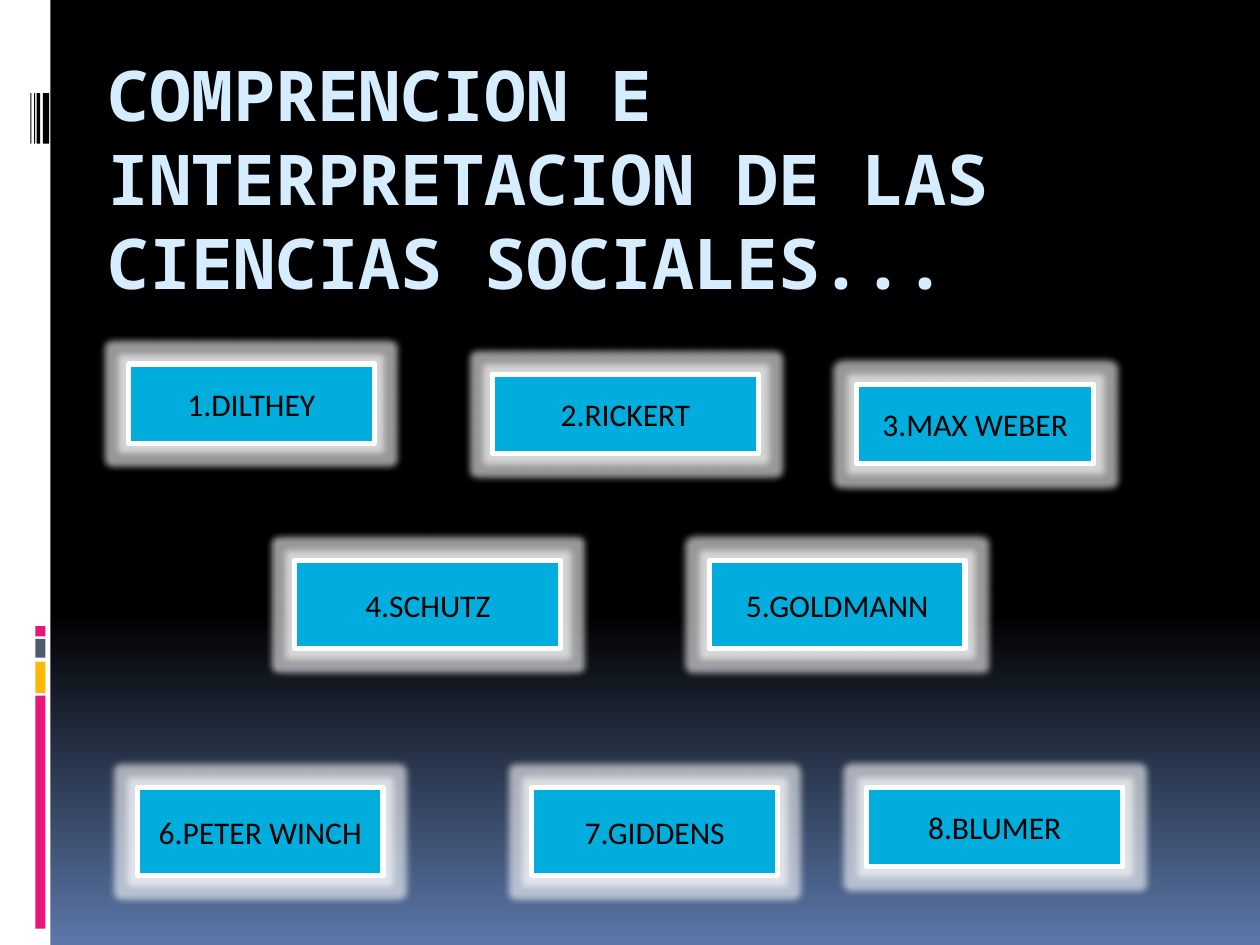
from pptx import Presentation
from pptx.dml.color import RGBColor
from pptx.enum import shapes, text
from pptx.oxml import parse_xml
from pptx.oxml.ns import nsdecls
from pptx.util import Inches, Pt

STRIPES = [
    (0, 0, 0.4, 7.5, "FFFFFF"),
    (0.34, 0.74, 0.05, 0.4, "000000"),
    (0.29, 0.74, 0.03, 0.4, "000000"),
    (0.27, 0.74, 0.01, 0.4, "000000"),
    (0.24, 0.74, 0.01, 0.4, "000000"),
    (0.28, 5.52, 0.08, 1.85, "EA157A"),
    (0.28, 5.25, 0.08, 0.25, "FEB80A"),
    (0.28, 5.07, 0.08, 0.15, "4E5B6F"),
    (0.28, 4.97, 0.08, 0.08, "EA157A"),
]
AUTHORS = [
    ("1.DILTHEY", 1.02, 2.89, 1.95, 0.63),
    ("2.RICKERT", 3.91, 2.97, 2.11, 0.63),
    ("3.MAX WEBER", 6.8, 3.05, 1.88, 0.63),
    ("4.SCHUTZ", 2.34, 4.45, 2.11, 0.7),
    ("5.GOLDMANN", 5.63, 4.45, 2.03, 0.7),
    ("6.PETER WINCH", 1.09, 6.25, 1.95, 0.7),
    ("7.GIDDENS", 4.22, 6.25, 1.95, 0.7),
    ("8.BLUMER", 6.88, 6.25, 2.03, 0.63),
]


def rgb(value):
    return RGBColor.from_string(value)


def set_background(s):
    fill = s.background.fill
    fill.gradient()
    fill.gradient_angle = 270
    for stop, position, color in zip(fill.gradient_stops, (0.65, 1), ("000000", "5B77A8")):
        stop.position = position
        stop.color.rgb = rgb(color)


def add_run(p, words, size, font, color, bold=False):
    r = p.add_run()
    r.text = words
    r.font.size = Pt(size)
    r.font.name = font
    r.font.bold = bold
    r.font.color.rgb = rgb(color)


def add_rect(s, left, top, width, height, color):
    sp = s.shapes.add_shape(shapes.MSO_SHAPE.RECTANGLE, Inches(left), Inches(top),
                            Inches(width), Inches(height))
    sp.shadow.inherit = False
    sp.fill.solid()
    sp.fill.fore_color.rgb = rgb(color)
    sp.line.fill.background()
    return sp


def add_glow(sp, color, radius, alpha):
    effects = sp._element.spPr.find("{*}effectLst")
    effects.append(parse_xml(
        f'<a:glow {nsdecls("a")} rad="{Pt(radius)}"><a:srgbClr val="{color}">'
        f'<a:alpha val="{alpha * 1000}"/></a:srgbClr></a:glow>'))


def add_author(s, name, left, top, width, height):
    sp = add_rect(s, left, top, width, height, "00ADDC")
    sp.line.color.rgb = rgb("FFFFFF")
    sp.line.width = Pt(3)
    add_glow(sp, "FFFFFF", 8, 60)
    tf = sp.text_frame
    tf.word_wrap = True
    tf.vertical_anchor = text.MSO_ANCHOR.MIDDLE
    p = tf.paragraphs[0]
    p.alignment = text.PP_ALIGN.CENTER
    add_run(p, name, 18, "Calibri", "000000")


def set_title(s, words):
    title = s.shapes.title
    title.left, title.top = Inches(0.75), Inches(0.31)
    title.width, title.height = Inches(8.5), Inches(2.27)
    tf = title.text_frame
    tf.word_wrap = True
    tf.auto_size = text.MSO_AUTO_SIZE.NONE
    tf.vertical_anchor = text.MSO_ANCHOR.TOP
    tf.margin_top = Inches(0.1)
    p = tf.paragraphs[0]
    p.alignment = text.PP_ALIGN.LEFT
    p.line_spacing = Pt(48)
    p.space_before = Pt(0)
    add_run(p, words, 40, "Noto Sans Mono", "D6ECFF", bold=True)


def main():
    prs = Presentation()
    prs.slide_width, prs.slide_height = Inches(10), Inches(7.5)
    s = prs.slides.add_slide(prs.slide_layouts[0])
    subtitle = s.placeholders[1]._element
    subtitle.getparent().remove(subtitle)
    set_background(s)
    for stripe in STRIPES:
        add_rect(s, *stripe)
    set_title(s, "COMPRENCION E INTERPRETACION DE LAS CIENCIAS SOCIALES...")
    for author in AUTHORS:
        add_author(s, *author)
    prs.save("out.pptx")


if __name__ == "__main__":
    main()
